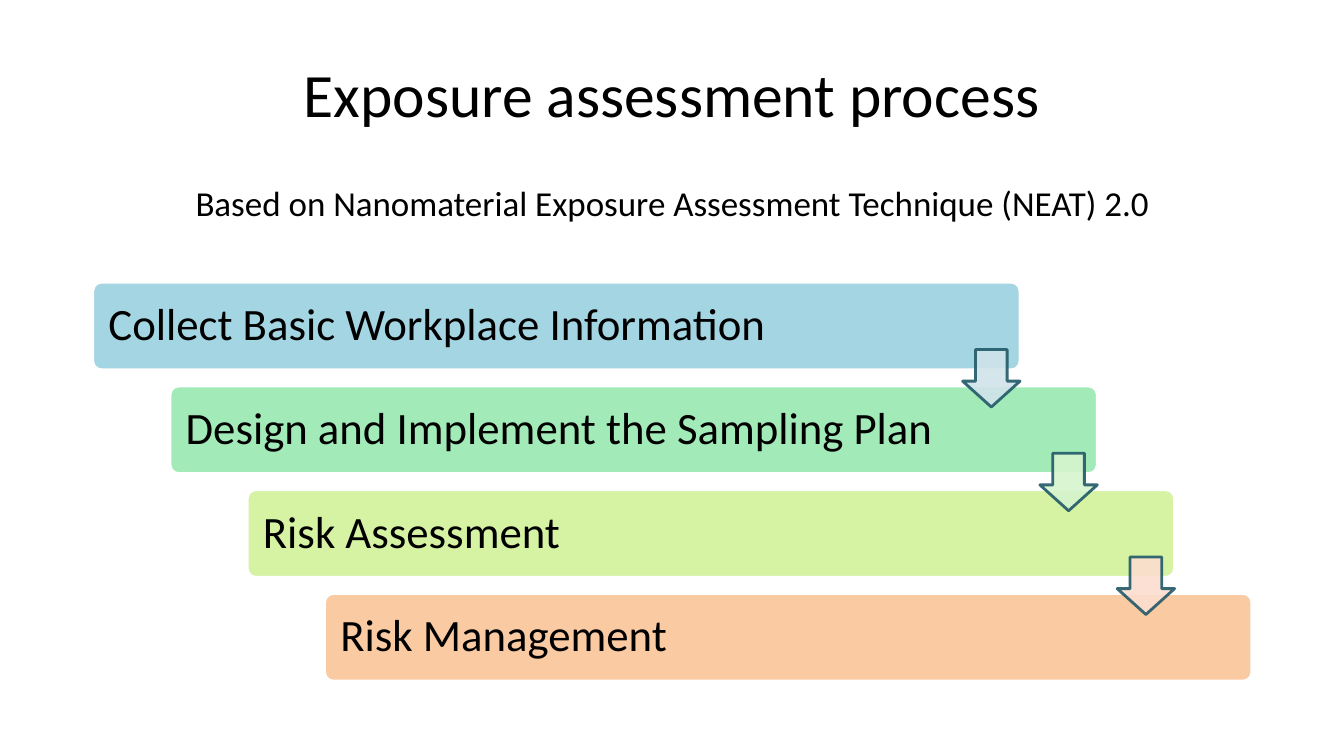
from dataclasses import dataclass

from lxml import etree
from pptx import Presentation
from pptx.dml import color
from pptx.enum import shapes, text
from pptx.oxml import ns
from pptx.util import Pt

STEP_LEFT, STEP_TOP = 66.24, 201.6
STEP_RIGHT, STEP_DOWN = 55.2, 74.1
BAR_WIDTH, BAR_HEIGHT = 662.4, 62.64
ARROW_SIZE, ARROW_DROP = 41.04, 48.1


@dataclass
class Step:
    label: str
    bar_color: str
    arrow_color: str = ""


STEPS = [
    Step("Collect Basic Workplace Information", "4BACC6", "D0E3EA"),
    Step("Design and Implement the Sampling Plan", "47D872", "D6F4CE"),
    Step("Risk Assessment", "ACE946", "FCDDCF"),
    Step("Risk Management", "F79646"),
]


def paint(target, hex_color: str, opacity: int = 100) -> None:
    target.solid()
    target.fore_color.rgb = color.RGBColor.from_string(hex_color)
    if opacity < 100:
        for rgb in target._xPr.iter(ns.qn("a:srgbClr")):
            etree.SubElement(rgb, ns.qn("a:alpha"), val=str(opacity * 1000))


def write(shape, wording: str, *, size: float, align=text.PP_ALIGN.CENTER,
          anchor=text.MSO_ANCHOR.MIDDLE, inset: float = 7.2,
          spacing: float = 1.0) -> None:
    frame = shape.text_frame
    frame.text = wording
    frame.word_wrap = True
    frame.auto_size = text.MSO_AUTO_SIZE.NONE
    frame.vertical_anchor = anchor
    frame.margin_left = frame.margin_right = Pt(inset)
    paragraph = frame.paragraphs[0]
    properties = paragraph._p.get_or_add_pPr()
    properties.set("marL", "0")
    properties.set("indent", "0")
    etree.SubElement(properties, ns.qn("a:buNone"))
    paragraph.alignment = align
    paragraph.line_spacing = spacing
    paragraph.space_before = Pt(0)
    font = paragraph.runs[0].font
    font.name = "Calibri"
    font.size = Pt(size)
    paint(font.fill, "000000")


def place(shape, left: float, top: float, width: float, height: float) -> None:
    shape.left, shape.top = Pt(left), Pt(top)
    shape.width, shape.height = Pt(width), Pt(height)


def add_block(slide, kind, box: tuple, adjustments: tuple, fill: str,
              fill_opacity: int, line: str, line_opacity: int = 100):
    block = slide.shapes.add_shape(kind, *(Pt(length) for length in box))
    block.shadow.inherit = False
    for index, value in enumerate(adjustments):
        block.adjustments[index] = value
    paint(block.fill, fill, fill_opacity)
    paint(block.line.fill, line, line_opacity)
    block.line.width = Pt(2)
    return block


def add_bar(slide, step: Step, left: float, top: float) -> None:
    bar = add_block(slide, shapes.MSO_SHAPE.ROUNDED_RECTANGLE,
                    (left, top, BAR_WIDTH, BAR_HEIGHT), (0.1,),
                    step.bar_color, 50, "FFFFFF")
    write(bar, step.label, size=32, align=text.PP_ALIGN.LEFT, inset=9.4,
          spacing=0.9)


def add_arrow(slide, step: Step, left: float, top: float) -> None:
    add_block(slide, shapes.MSO_SHAPE.DOWN_ARROW,
              (left + BAR_WIDTH - ARROW_SIZE, top + ARROW_DROP,
               ARROW_SIZE, ARROW_SIZE), (0.55, 0.45),
              step.arrow_color, 90, "215968", 90)


def main() -> None:
    deck = Presentation()
    deck.slide_width, deck.slide_height = Pt(960), Pt(540)
    slide = deck.slides.add_slide(deck.slide_layouts[1])

    heading, basis = slide.placeholders
    place(heading, 48, 21.6, 864, 90)
    write(heading, "Exposure assessment process", size=44)
    place(basis, 48, 126, 864, 356.4)
    write(basis, "Based on Nanomaterial Exposure Assessment Technique (NEAT) 2.0",
          size=25, anchor=text.MSO_ANCHOR.TOP)

    spots = [(step, STEP_LEFT + i * STEP_RIGHT, STEP_TOP + i * STEP_DOWN)
             for i, step in enumerate(STEPS)]
    for spot in spots:
        add_bar(slide, *spot)
    for spot in spots[:-1]:
        add_arrow(slide, *spot)

    deck.save("out.pptx")


if __name__ == "__main__":
    main()
